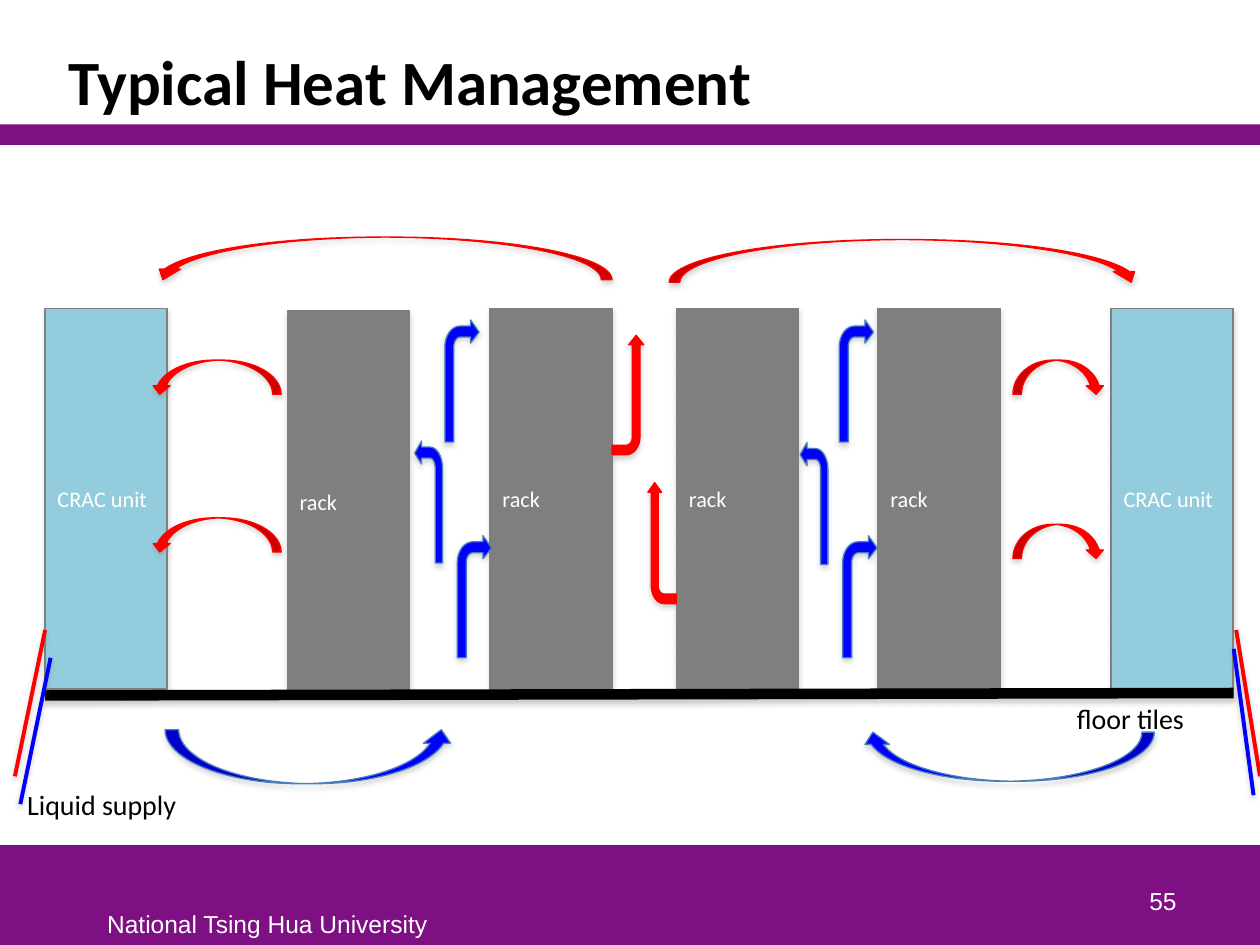
from math import cos, radians, sin

from lxml import etree
from pptx import Presentation
from pptx.dml.color import RGBColor
from pptx.enum import shapes, text
from pptx.oxml import ns
from pptx.util import Cm, Pt

PURPLE = RGBColor(0x7F, 0x10, 0x84)
GREY = RGBColor(0x7F, 0x7F, 0x7F)
AQUA = RGBColor(0x93, 0xCD, 0xDD)
RED = RGBColor(0xFF, 0, 0)
BLUE = RGBColor(0, 0, 0xFF)
EDGE = RGBColor(0x4A, 0x7E, 0xBB)
BLACK = RGBColor(0, 0, 0)
WHITE = RGBColor(0xFF, 0xFF, 0xFF)
KIND = shapes.MSO_SHAPE
ANCHOR = text.MSO_ANCHOR
ALIGN = text.PP_ALIGN


def arc(x, y, wide, high, start, end, steps=8):
    turns = [radians(start + (end - start) * i / steps) for i in range(steps + 1)]
    return [(x + wide * cos(t), y + high * sin(t)) for t in turns]


COLD = ([(0, 1)] + arc(0.45, 0.22, 0.45, 0.17, 180, 270)
        + [(0.75, 0.05), (0.75, 0), (1, 0.1), (0.75, 0.19), (0.75, 0.14)]
        + arc(0.45, 0.22, 0.19, 0.08, 270, 180) + [(0.26, 1)])
HOT = ([(0, 1)] + arc(0.44, 0.85, 0.44, 0.15, 90, 0)
       + [(0.88, 0.08), (1, 0.08), (0.76, 0), (0.52, 0.08), (0.64, 0.08)]
       + arc(0.44, 0.85, 0.2, 0.07, 0, 90) + [(0, 0.92)])


class Deck:
    font = "Calibri"

    def __init__(self):
        self.prs = Presentation()
        self.prs.slide_width, self.prs.slide_height = Cm(25.4), Cm(19.05)
        self.slide = self.prs.slides.add_slide(self.prs.slide_layouts[5])
        self.items = self.slide.shapes

    def style(self, frame, words, size, color, font=None, align=ALIGN.LEFT, bold=False):
        frame.text = words
        para = frame.paragraphs[0]
        para.alignment = align
        face = para.runs[0].font
        face.name, face.size, face.bold = font or self.font, Pt(size), bold
        face.color.rgb = color
        return para

    def title(self, words, x, y, w, h):
        box = self.items.title
        box.left, box.top, box.width, box.height = Cm(x), Cm(y), Cm(w), Cm(h)
        para = self.style(box.text_frame, words, 36, BLACK, bold=True)
        para.line_spacing = 0.85
        box.text_frame.vertical_anchor = ANCHOR.BOTTOM

    def label(self, words, x, y, w, h, size, color, font=None,
              align=ALIGN.LEFT, anchor=ANCHOR.TOP, wrap=False):
        frame = self.items.add_textbox(Cm(x), Cm(y), Cm(w), Cm(h)).text_frame
        frame.word_wrap = wrap
        frame.vertical_anchor = anchor
        self.style(frame, words, size, color, font, align)

    def shade(self, item, alpha):
        props = item._element.spPr
        for old in props.findall(ns.qn("a:effectLst")):
            props.remove(old)
        effects = etree.SubElement(props, ns.qn("a:effectLst"))
        glow = etree.SubElement(effects, ns.qn("a:outerShdw"), blurRad=str(Pt(3.1)),
                                dist=str(Pt(1.8)), dir="5400000", rotWithShape="0")
        tint = etree.SubElement(glow, ns.qn("a:srgbClr"), val="808080")
        etree.SubElement(tint, ns.qn("a:alpha"), val=str(alpha * 1000))

    def paint(self, item, fill, edge):
        item.fill.solid()
        item.fill.fore_color.rgb = fill
        item.line.color.rgb = edge
        item.line.width = Pt(0.75)
        self.shade(item, 35)

    def band(self, y, h):
        bar = self.items.add_shape(KIND.RECTANGLE, 0, Cm(y), Cm(25.4), Cm(h))
        bar.shadow.inherit = False
        bar.fill.solid()
        bar.fill.fore_color.rgb = PURPLE
        bar.line.fill.background()

    def unit(self, words, x, y, fill):
        box = self.items.add_shape(KIND.RECTANGLE, Cm(x), Cm(y), Cm(2.46), Cm(7.67))
        self.paint(box, fill, GREY)
        self.style(box.text_frame, words, 12.7, WHITE)
        box.text_frame.vertical_anchor = ANCHOR.MIDDLE

    def line(self, x1, y1, x2, y2, color, width=2.25):
        rule = self.items.add_connector(shapes.MSO_CONNECTOR.STRAIGHT,
                                        Cm(x1), Cm(y1), Cm(x2), Cm(y2))
        rule.line.color.rgb = color
        rule.line.width = Pt(width)
        self.shade(rule, 38)

    def curve(self, kind, x, y, w, h, fill, edge, flip=False):
        arrow = self.items.add_shape(kind, Cm(x), Cm(y), Cm(w), Cm(h))
        if flip:
            arrow._element.spPr.find(ns.qn("a:xfrm")).set("flipH", "1")
        self.paint(arrow, fill, edge)

    def bend(self, form, x, y, w, h, fill, edge, flip=False):
        spots = [(Cm(x + w * (1 - px if flip else px)), Cm(y + h * py)) for px, py in form]
        pen = self.items.build_freeform(*spots[0])
        pen.add_line_segments(spots[1:], close=True)
        self.paint(pen.convert_to_shape(), fill, edge)


def main():
    deck = Deck()
    deck.band(17.04, 2.01)
    deck.band(2.51, 0.41)
    deck.label("National Tsing Hua University", 1.91, 18.21, 7.01, 0.84, 14, WHITE, "Arial")
    deck.title("Typical Heat Management", 1.12, 0.64, 22.78, 1.88)
    deck.label("55", 18.69, 17.3, 5.28, 1.27, 14, WHITE, "Arial",
               ALIGN.RIGHT, ANCHOR.BOTTOM, True)

    for x, y in [(5.79, 6.27), (9.88, 6.22), (13.64, 6.22), (17.7, 6.22)]:
        deck.unit("rack", x, y, GREY)
    for x in (0.91, 22.4):
        deck.unit("CRAC unit", x, 6.22, AQUA)

    deck.line(0.91, 14.02, 24.87, 13.97, BLACK, 6)
    deck.label("floor tiles", 21.46, 14.02, 2.72, 0.94, 16, BLACK)
    for x1, y1, x2, color in [(0.91, 12.7, 0.3, RED), (1.02, 13.26, 0.41, BLUE),
                              (24.92, 12.7, 25.4, RED), (24.87, 13.08, 25.27, BLUE)]:
        deck.line(x1, y1, x2, y1 + 2.95, color)
    deck.label("Liquid supply", 0.3, 15.75, 3.53, 0.94, 16, BLACK)

    deck.curve(KIND.CURVED_UP_ARROW, 3.33, 14.71, 5.84, 1.09, BLUE, EDGE)
    deck.curve(KIND.CURVED_UP_ARROW, 17.35, 14.76, 5.92, 0.99, BLUE, EDGE, True)
    for x, y in [(9.22, 10.8), (16.99, 10.8), (8.97, 6.45), (16.92, 6.45)]:
        deck.bend(COLD, x, y, 0.69, 2.46, BLUE, EDGE)
    for x, y in [(8.36, 8.89), (16.13, 8.92)]:
        deck.bend(COLD, x, y, 0.56, 2.46, BLUE, EDGE, True)

    for x, y, w, h, flip in [(13.49, 4.83, 9.53, 0.86, False), (3.07, 4.78, 9.27, 0.86, True),
                             (3.05, 7.26, 2.62, 0.69, True), (3.05, 10.44, 2.62, 0.69, True),
                             (20.42, 7.26, 1.85, 0.69, False), (20.42, 10.57, 1.85, 0.69, False)]:
        deck.curve(KIND.CURVED_DOWN_ARROW, x, y, w, h, RED, RED, flip)
    deck.bend(HOT, 12.34, 6.76, 0.64, 2.41, RED, RED)
    deck.bend(HOT, 13.06, 9.73, 0.58, 2.44, RED, RED, True)
    deck.prs.save("out.pptx")


if __name__ == "__main__":
    main()
